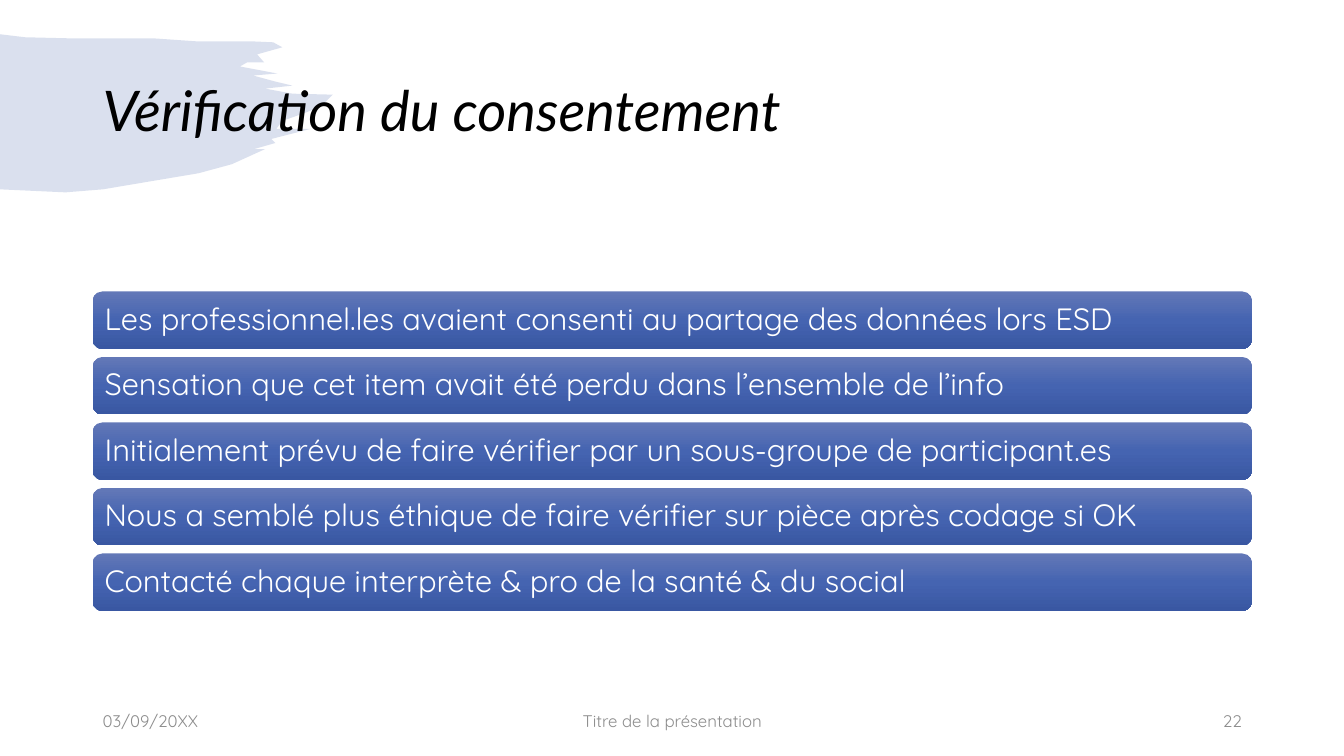
from collections import namedtuple
from copy import deepcopy
from dataclasses import dataclass

from lxml.etree import SubElement
from pptx import Presentation
from pptx.dml.color import RGBColor
from pptx.enum.shapes import MSO_SHAPE as Shape
from pptx.enum.text import MSO_ANCHOR as Anchor, PP_ALIGN as Align
from pptx.oxml.ns import qn
from pptx.util import Inches, Pt

Box = namedtuple("Box", "left top width height")


@dataclass(frozen=True)
class Theme:
    title_font: str = "Lato"
    body_font: str = "Quicksand"
    title_size: int = 40
    bar_size: int = 22
    footer_size: int = 12
    title_color: str = "000000"
    bar_text: str = "FFFFFF"
    footer_color: str = "8C8C8C"
    brush: str = "4A66AC"
    brush_opacity: int = 20
    bar_gradient: tuple = ("6378B7", "4564B1", "3957A2")


THEME = Theme()

TITLE = "Vérification du consentement"
STATEMENTS = [
    "Les professionnel.les avaient consenti au partage des données lors ESD",
    "Sensation que cet item avait été perdu dans l’ensemble de l’info",
    "Initialement prévu de faire vérifier par un sous-groupe de participant.es",
    "Nous a semblé plus éthique de faire vérifier sur pièce après codage si OK",
    "Contacté chaque interprète & pro de la santé & du social",
]
# Footer text, first column, column count, alignment
FOOTER_COLUMNS = 23
FOOTER = [
    ("03/09/20XX", 0, 6, Align.LEFT),
    ("Titre de la présentation", 7, 9, Align.CENTER),
    ("22", 17, 6, Align.RIGHT),
]

# Brush outline on a 330 x 158 grid, clockwise from the slide's left edge
BRUSH_GRID = (330, 158)
BRUSH_OUTLINE = [
    (0, 0), (25, 3), (66, 4), (151, 4), (194, 7), (248, 7), (271, 8), (280, 13),
    (255, 20), (262, 28), (245, 28), (238, 32), (275, 39), (251, 41), (273, 47),
    (290, 51), (263, 54), (290, 59), (330, 60), (318, 72), (300, 79), (280, 86),
    (274, 94), (308, 94), (269, 104), (273, 108), (252, 114), (263, 114),
    (230, 129), (197, 138), (102, 154), (65, 157), (0, 154),
]


def share(prs, left, top, width, height):
    """A box given in percent of the slide's size."""
    w, h = prs.slide_width / 100, prs.slide_height / 100
    return Box(round(left * w), round(top * h), round(width * w), round(height * h))


def write(shape, text, font, size, color, align=Align.LEFT, italic=None):
    frame = shape.text_frame
    frame.word_wrap = True
    frame.vertical_anchor = Anchor.MIDDLE
    line = frame.paragraphs[0]
    line.text = text
    line.alignment = align
    line.font.name = font
    line.font.size = Pt(size)
    line.font.italic = italic
    line.font.color.rgb = RGBColor.from_string(color)
    return line


def add_brush(slide, box):
    columns, rows = BRUSH_GRID
    points = [(round(box.left + x * box.width / columns),
               round(box.top + y * box.height / rows)) for x, y in BRUSH_OUTLINE]
    builder = slide.shapes.build_freeform(*points[0])
    builder.add_line_segments(points[1:], close=True)
    brush = builder.convert_to_shape()
    brush.shadow.inherit = False
    brush.line.fill.background()
    brush.fill.solid()
    brush.fill.fore_color.rgb = RGBColor.from_string(THEME.brush)
    # Transparency
    color = brush.fill._xPr.find(qn("a:solidFill"))[0]
    SubElement(color, qn("a:alpha")).set("val", str(THEME.brush_opacity * 1000))


def add_title(slide, box):
    title = slide.shapes.add_textbox(*box)
    line = write(title, TITLE, THEME.title_font, THEME.title_size,
                 THEME.title_color, italic=True)
    line.line_spacing = 0.9


def fill_gradient(bar):
    bar.fill.gradient()
    bar.fill.gradient_angle = 270
    # Middle stop
    stops = bar.fill._xPr.find(qn("a:gradFill")).find(qn("a:gsLst"))
    stops.insert(1, deepcopy(stops[0]))
    for index, (stop, color) in enumerate(zip(bar.fill.gradient_stops, THEME.bar_gradient)):
        stop.position = index / 2
        stop.color.rgb = RGBColor.from_string(color)


def add_statements(slide, box):
    height = round(box.height * 0.18)
    pitch = (box.height - height) / (len(STATEMENTS) - 1)
    for row, statement in enumerate(STATEMENTS):
        bar = slide.shapes.add_shape(Shape.ROUNDED_RECTANGLE, box.left,
                                     round(box.top + row * pitch), box.width, height)
        bar.shadow.inherit = False
        bar.line.fill.background()
        fill_gradient(bar)
        frame = bar.text_frame
        frame.margin_left = frame.margin_right = Inches(0.09)
        frame.margin_top = frame.margin_bottom = Inches(0.09)
        line = write(bar, statement, THEME.body_font, THEME.bar_size, THEME.bar_text)
        line.line_spacing = 0.9


def add_footer(slide, box):
    column = box.width / FOOTER_COLUMNS
    for text, first, count, align in FOOTER:
        note = slide.shapes.add_textbox(round(box.left + first * column), box.top,
                                        round(count * column), box.height)
        line = write(note, text, THEME.body_font, THEME.footer_size,
                     THEME.footer_color, align)
        line.space_after = Pt(6)


def main():
    prs = Presentation()
    prs.slide_width, prs.slide_height = Inches(13.33), Inches(7.5)
    slide = prs.slides.add_slide(prs.slide_layouts[6])
    add_brush(slide, share(prs, 0, 4.53, 24.76, 21.05))
    add_title(slide, share(prs, 6.9, 5.33, 86.25, 19.33))
    add_footer(slide, share(prs, 6.9, 92.67, 86.25, 5.33))
    add_statements(slide, share(prs, 6.9, 38.55, 86.25, 42.27))
    prs.save("out.pptx")


if __name__ == "__main__":
    main()
